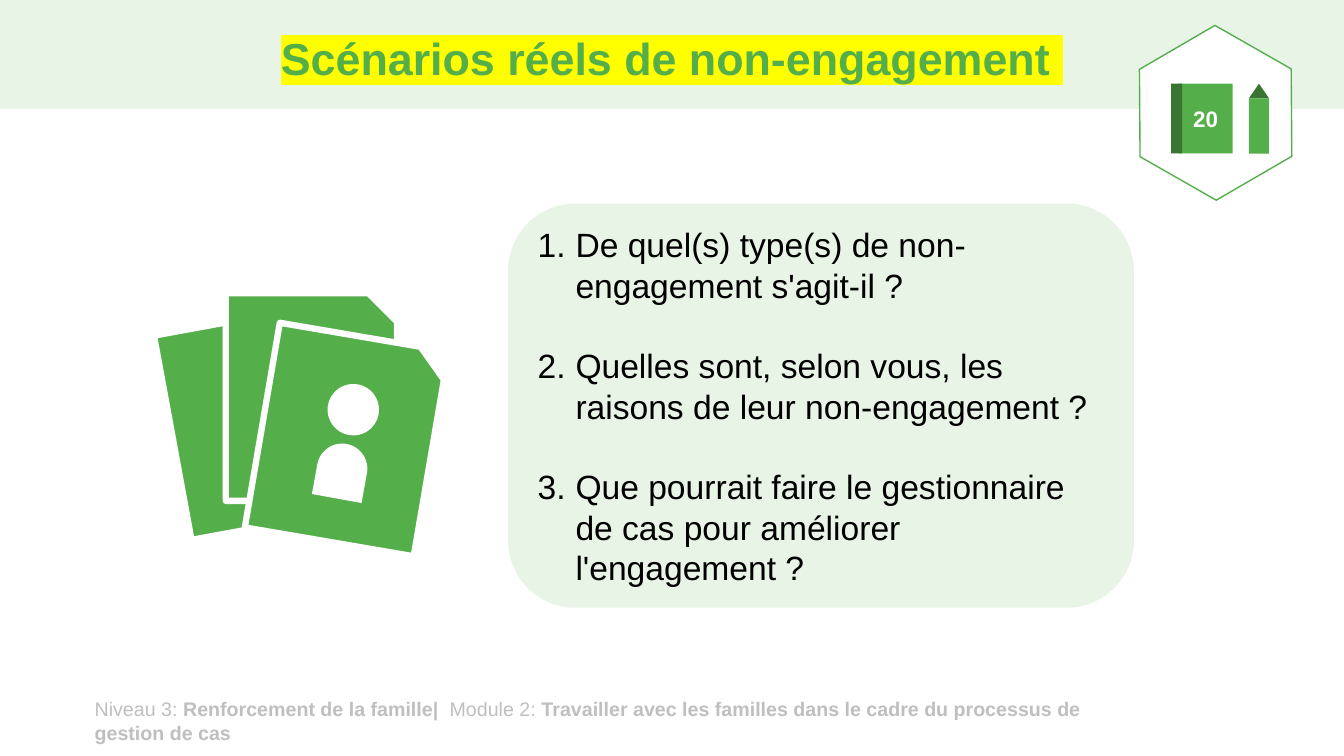
"""Build the slide on real-life scenarios of non-engagement."""
from lxml.etree import SubElement
from pptx import Presentation
from pptx.dml.color import RGBColor
from pptx.enum.shapes import MSO_SHAPE as Shape
from pptx.enum.text import MSO_ANCHOR as Anchor, PP_ALIGN as Align
from pptx.oxml.ns import qn
from pptx.util import Pt

GREEN, DARK_GREEN, PALE_GREEN = "54AF4B", "387532", "E8F4E6"
WHITE, BLACK, GREY, YELLOW = "FFFFFF", "000000", "BFBFBF", "FFFF00"

presentation = Presentation()
presentation.slide_width, presentation.slide_height = Pt(960), Pt(540)
slide = presentation.slides.add_slide(presentation.slide_layouts[6])


def add_shape(kind, left, top, width, height, fill, line=None, line_width=1, rotation=0):
    shape = slide.shapes.add_shape(kind, Pt(left), Pt(top), Pt(width), Pt(height))
    shape.shadow.inherit = False
    shape.rotation = rotation
    shape.fill.solid()
    shape.fill.fore_color.rgb = RGBColor.from_string(fill)
    if line:
        shape.line.color.rgb = RGBColor.from_string(line)
        shape.line.width = Pt(line_width)
    else:
        shape.line.fill.background()
    return shape


def set_font(paragraph, size, color, bold=None):
    font = paragraph.font
    font.name, font.size, font.bold = "Arial", Pt(size), bold
    font.color.rgb = RGBColor.from_string(color)


add_shape(Shape.RECTANGLE, 0, 0, 960, 77.8, PALE_GREEN)

footer = slide.shapes.add_textbox(Pt(60.5), Pt(494.6), Pt(764.6), Pt(41))
footer.text_frame.word_wrap = True
paragraph = footer.text_frame.paragraphs[0]
set_font(paragraph, 14, GREY)
for text, bold in [
    ("Niveau 3: ", False),
    ("Renforcement de la famille|  ", True),
    ("Module 2: ", False),
    ("Travailler avec les familles dans le cadre du processus de gestion de cas", True),
]:
    run = paragraph.add_run()
    run.text, run.font.bold = text, bold

title = slide.shapes.add_textbox(Pt(66.2), Pt(9.4), Pt(828), Pt(68.4))
title.text_frame.word_wrap = True
title.text_frame.vertical_anchor = Anchor.MIDDLE
paragraph = title.text_frame.paragraphs[0]
paragraph.alignment, paragraph.line_spacing = Align.CENTER, 0.9
set_font(paragraph, 32, GREEN, True)
run = paragraph.add_run()
run.text = "Scénarios réels de non-engagement "
highlight = SubElement(run.font._element, qn("a:highlight"))
SubElement(highlight, qn("a:srgbClr"), val=YELLOW)

hexagon = add_shape(Shape.HEXAGON, 805.7, 26.6, 125.3, 108, WHITE, GREEN, 1, 29.7)
hexagon.adjustments[0] = 0.29
book = add_shape(Shape.RECTANGLE, 841.7, 59.8, 38.9, 49.7, GREEN)
book.text_frame.word_wrap = False
book.text_frame.vertical_anchor = Anchor.MIDDLE
paragraph = book.text_frame.paragraphs[0]
paragraph.text, paragraph.alignment = "20", Align.CENTER
set_font(paragraph, 16, WHITE, True)
add_shape(Shape.RECTANGLE, 836.6, 59.8, 7.9, 49.7, DARK_GREEN)
add_shape(Shape.ISOSCELES_TRIANGLE, 892.1, 59.8, 14.4, 10.4, DARK_GREEN)
add_shape(Shape.RECTANGLE, 892.1, 70.2, 14.4, 39.6, GREEN)

questions = add_shape(Shape.ROUNDED_RECTANGLE, 362.9, 145.4, 447.1, 288.7, PALE_GREEN)
frame = questions.text_frame
frame.word_wrap = True
frame.vertical_anchor = Anchor.MIDDLE
for index, text in enumerate([
    "De quel(s) type(s) de non-engagement s'agit-il ?",
    "Quelles sont, selon vous, les raisons de leur non-engagement ?",
    "Que pourrait faire le gestionnaire de cas pour améliorer l'engagement ?",
]):
    paragraph = frame.add_paragraph() if index else frame.paragraphs[0]
    paragraph.text, paragraph.alignment = text, Align.LEFT
    paragraph.space_before = Pt(28.8 if index else 0)
    set_font(paragraph, 24, BLACK)
    properties = paragraph._p.get_or_add_pPr()
    properties.set("marL", str(Pt(27)))
    properties.set("indent", str(Pt(-27)))
    numbering = properties.makeelement(qn("a:buAutoNum"), {"type": "arabicPeriod"})
    properties.find(qn("a:defRPr")).addprevious(numbering)

for left, top, rotation in [(122.4, 227.5, 349.6), (161.3, 209.5, 0), (186.5, 239.8, 9.7)]:
    add_shape(Shape.SNIP_1_RECTANGLE, left, top, 122.4, 148.3, GREEN, WHITE, 4.5, rotation)
body = add_shape(Shape.ROUND_2_SAME_RECTANGLE, 226.1, 316.8, 36, 39.6, WHITE, rotation=10.3)
body.adjustments[0] = 0.5
add_shape(Shape.OVAL, 234, 274.3, 36.7, 36.7, WHITE, rotation=10.3)

presentation.save("out.pptx")
